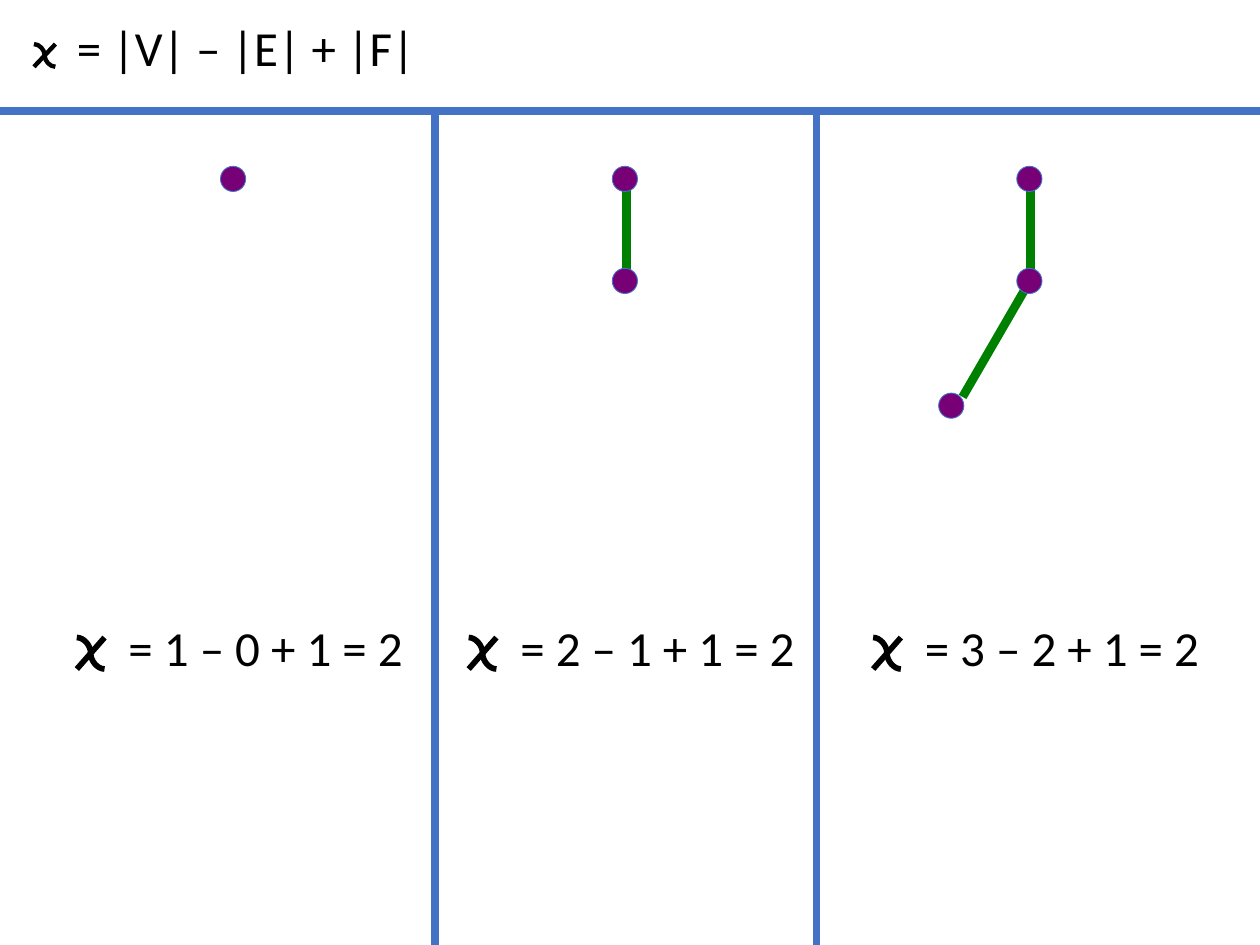
from pptx import Presentation
from pptx import util as u
from pptx.dml.color import RGBColor
from pptx.enum import shapes, text
from pptx.oxml.ns import qn
from lxml import etree

PX = 9144
COLOURS = {"ink": "000000", "rule": "4472C4", "vertex": "770077", "edge": "008000"}


class Sheet:
    """Holds the style and the current slide, and draws each kind of element."""

    def __init__(self, page, font="Calibri", size=28):
        self.page, self.font, self.size = page, font, size

    def colour(self, name):
        return RGBColor.from_string(COLOURS[name])

    def set_words(self, box, words, place, inset, top):
        box.left, box.top, box.width, box.height = (u.Emu(v * PX) for v in place)
        frame = box.text_frame
        frame.word_wrap = True
        frame.auto_size = text.MSO_AUTO_SIZE.NONE
        frame.vertical_anchor = text.MSO_ANCHOR.TOP
        frame.margin_left, frame.margin_top = inset * PX, top * PX
        frame.margin_right = frame.margin_bottom = 0
        frame.text = words
        para = frame.paragraphs[0]
        para.alignment = text.PP_ALIGN.LEFT
        span = para.runs[0]
        span.font.name, span.font.size = self.font, u.Pt(self.size)
        span.font.color.rgb = self.colour("ink")

    def title(self, words, place, inset):
        self.set_words(self.page.shapes.title, words, place, inset, top=5)

    def label(self, words, place, inset):
        self.set_words(self.page.shapes.add_textbox(0, 0, 0, 0), words, place, inset, top=15)

    def line(self, start, end, colour, weight, kind=shapes.MSO_CONNECTOR.STRAIGHT):
        ends = [u.Emu(v * PX) for v in (*start, *end)]
        line = self.page.shapes.add_connector(kind, *ends)
        line.line.color.rgb = self.colour(colour)
        line.line.width = u.Pt(weight)
        etree.SubElement(line._element.spPr, qn("a:effectLst"))

    def chi(self, left, top, width, height, weight):
        right, bottom = left + width, top + height
        self.line((right, bottom), (left, top), "ink", weight, shapes.MSO_CONNECTOR.CURVE)
        self.line((left, bottom), (right, top), "ink", weight)

    def dot(self, x, y, radius=10):
        place = (u.Emu(v * PX) for v in (x - radius, y - radius, 2 * radius, 2 * radius))
        dot = self.page.shapes.add_shape(shapes.MSO_SHAPE.OVAL, *place)
        dot.shadow.inherit = False
        dot.fill.solid()
        dot.fill.fore_color.rgb = self.colour("vertex")
        dot.line.color.rgb = self.colour("rule")
        dot.line.width = u.Pt(0.5)


def main():
    deck = Presentation()
    deck.slide_width, deck.slide_height = 1000 * PX, 750 * PX
    sheet = Sheet(deck.slides.add_slide(deck.slide_layouts[5]))

    sheet.title("= |V| – |E| + |F|", (33, 9, 309, 57), inset=28)
    sheet.chi(27, 35, 17, 18, 2.5)

    for start, end in (((345, 88), (345, 750)), ((648, 88), (648, 750)), ((0, 88), (1000, 88))):
        sheet.line(start, end, "rule", 4.5)

    vertices = [(127, 142), (127, 223), (65, 322)]
    edges = [((128, 136), (128, 217)), ((74, 315), (125, 227))]
    panels = [(58, 376), (369, 376), (690, 286)]
    for count, (left, width) in enumerate(panels, 1):
        for (x1, y1), (x2, y2) in edges[:count - 1]:
            sheet.line((left + x1, y1), (left + x2, y2), "edge", 5)
        for x, y in vertices[:count]:
            sheet.dot(left + x, y)
        sheet.label(f"= {count} – {count - 1} + 1 = 2", (left, 475, width, 71), inset=44)
        sheet.chi(left + 3, 506, 22, 25, 3.25)

    deck.save("out.pptx")


if __name__ == "__main__":
    main()
